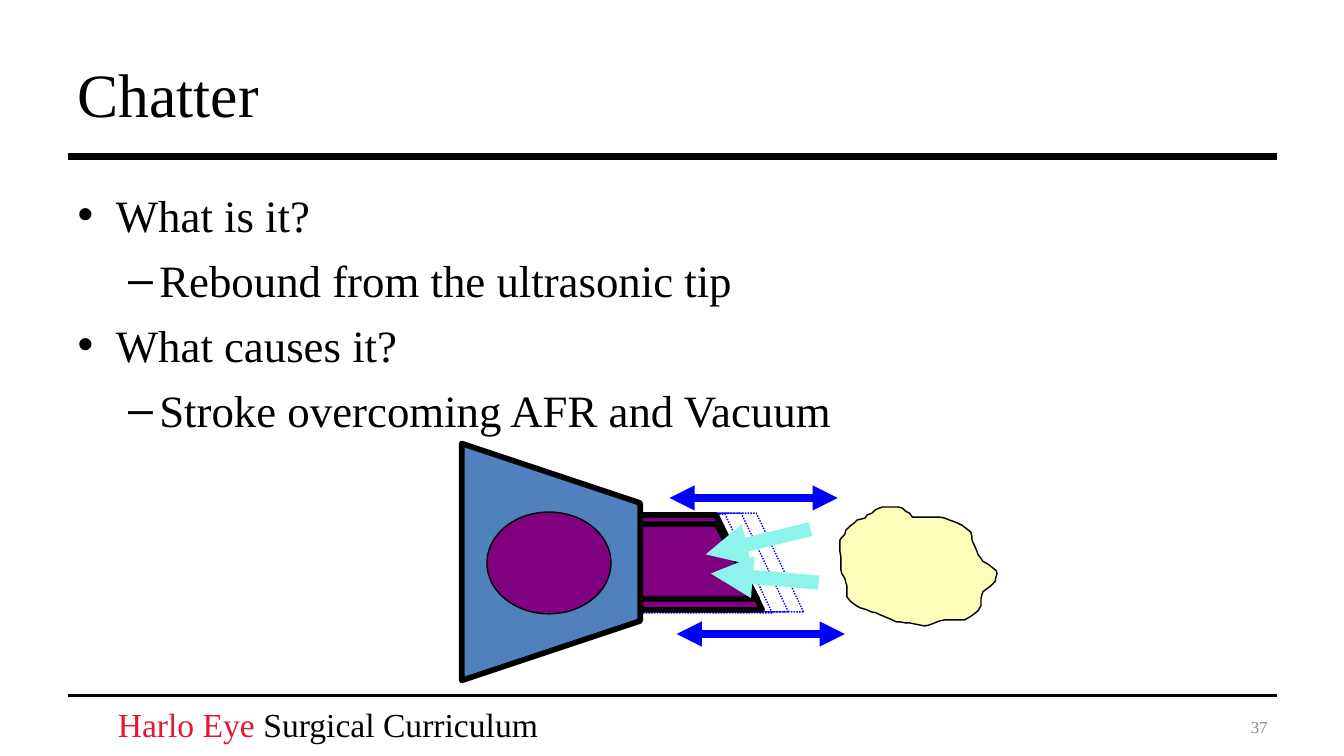
from lxml import etree
from pptx import Presentation
from pptx.dml.color import RGBColor
from pptx.enum.dml import MSO_LINE
from pptx.enum.shapes import MSO_CONNECTOR, MSO_SHAPE
from pptx.enum.text import MSO_ANCHOR, MSO_AUTO_SIZE, PP_ALIGN
from pptx.oxml.ns import qn
from pptx.util import Inches, Pt

STRAIGHT = MSO_CONNECTOR.STRAIGHT
SLANT, OVAL = MSO_SHAPE.PARALLELOGRAM, MSO_SHAPE.OVAL
DOTTED = MSO_LINE.ROUND_DOT
MIDDLE, TOP = MSO_ANCHOR.MIDDLE, MSO_ANCHOR.TOP
LEFT, RIGHT = PP_ALIGN.LEFT, PP_ALIGN.RIGHT
NO_FIT = MSO_AUTO_SIZE.NONE

BLACK = RGBColor(0x00, 0x00, 0x00)
RED = RGBColor(0xE2, 0x18, 0x35)
GRAY = RGBColor(0x8C, 0x8C, 0x8C)
BLUE = RGBColor(0x00, 0x00, 0xFF)
STEEL = RGBColor(0x4F, 0x81, 0xBD)
PURPLE = RGBColor(0x80, 0x00, 0x80)
AQUA = RGBColor(0x8C, 0xF4, 0xEA)
CREAM = RGBColor(0xFC, 0xFE, 0xB9)
FONT = "Times New Roman"

# Level, text
POINTS = [
    (0, "What is it?"),
    (1, "Rebound from the ultrasonic tip"),
    (0, "What causes it?"),
    (1, "Stroke overcoming AFR and Vacuum"),
]
# Bullet, left margin, hanging indent for each level
LEVELS = [("•", 0.38, 0.38), ("–", 0.81, 0.31)]

# Outlines in hundredths of an inch
SLEEVE = [(458, 440), (635, 499), (635, 616), (458, 675)]
CHUNK = [
    (868, 506), (865, 509), (860, 511), (858, 514), (854, 515), (850, 516),
    (847, 519), (843, 522), (839, 526), (838, 530), (835, 533), (833, 536),
    (833, 547), (834, 552), (834, 565), (835, 569), (838, 574), (839, 578),
    (840, 581), (840, 592), (843, 596), (848, 600), (853, 603), (860, 605),
    (864, 607), (869, 608), (873, 610), (878, 612), (885, 615), (889, 617),
    (893, 617), (898, 618), (902, 618), (907, 619), (912, 620), (917, 621),
    (922, 620), (927, 618), (932, 616), (937, 615), (957, 615), (962, 612),
    (965, 610), (970, 606), (973, 601), (973, 594), (974, 590), (975, 587),
    (979, 584), (983, 581), (987, 577), (988, 572), (989, 569), (988, 566),
    (983, 562), (979, 559), (975, 557), (973, 554), (970, 550), (969, 547),
    (967, 542), (965, 538), (964, 535), (964, 532), (963, 528), (958, 524),
    (954, 521), (950, 519), (945, 517), (942, 516), (937, 514), (932, 513),
    (905, 513), (902, 509), (898, 507), (895, 504), (891, 503), (875, 503),
    (870, 505),
]


def place(shape, left, top, width, height):
    shape.left, shape.top = Inches(left), Inches(top)
    shape.width, shape.height = Inches(width), Inches(height)


def style(font, size, color):
    font.name, font.size = FONT, Pt(size)
    font.color.rgb = color


def paint(shape, fill, line, width):
    shape.shadow.inherit = False
    if fill is None:
        shape.fill.background()
    else:
        shape.fill.solid()
        shape.fill.fore_color.rgb = fill
    shape.line.color.rgb = line
    shape.line.width = Pt(width)


def add_line(slide, start, end, color, width, ends=()):
    line = slide.shapes.add_connector(
        STRAIGHT, *(Inches(value) for value in start + end))
    line.line.color.rgb = color
    line.line.width = Pt(width)
    props = line.line._get_or_add_ln()
    for tag in ends:
        etree.SubElement(props, qn(tag), type="triangle")
    etree.SubElement(line._element.spPr, qn("a:effectLst"))


def add_shape(slide, kind, box, fill, line, width):
    shape = slide.shapes.add_shape(kind, *(Inches(value) for value in box))
    paint(shape, fill, line, width)
    return shape


def add_slant(slide, box, ratio, fill, line, width):
    shape = add_shape(slide, SLANT, box, fill, line, width)
    shape.adjustments[0] = ratio
    shape._element.spPr.xfrm.set("flipH", "1")
    return shape


def add_form(slide, points, fill, width):
    form = slide.shapes.build_freeform(*points[0], scale=Inches(0.01))
    form.add_line_segments(points[1:], close=True)
    paint(form.convert_to_shape(), fill, BLACK, width)


def add_text(slide, box, runs, size, align=LEFT, anchor=TOP):
    frame = slide.shapes.add_textbox(
        *(Inches(value) for value in box)).text_frame
    frame.word_wrap = True
    frame.vertical_anchor = anchor
    para = frame.paragraphs[0]
    para.alignment = align
    for text, color in runs:
        run = para.add_run()
        run.text = text
        style(run.font, size, color)


def fill_title(title):
    place(title, 0.67, 0.3, 12, 1.25)
    title.text = "Chatter"
    frame = title.text_frame
    frame.auto_size = NO_FIT
    frame.vertical_anchor = MIDDLE
    para = frame.paragraphs[0]
    para.alignment = LEFT
    style(para.font, 44, BLACK)


def fill_body(body):
    place(body, 0.67, 1.75, 12, 5.02)
    frame = body.text_frame
    frame.auto_size = NO_FIT
    frame.margin_top = Inches(0.11)
    for index, (level, text) in enumerate(POINTS):
        para = frame.add_paragraph() if index else frame.paragraphs[0]
        para.text, para.level = text, level
        para.space_before = Pt(8 if index else 0)
        mark, margin, hang = LEVELS[level]
        props = para._p.get_or_add_pPr()
        props.set("marL", str(Inches(margin)))
        props.set("indent", str(-Inches(hang)))
        etree.SubElement(props, qn("a:buChar"), char=mark)
        style(para.font, 32, BLACK)


def draw_tip(slide):
    # Moving positions of the needle
    for left, top in [(5.61, 5.1), (5.77, 5.09), (5.92, 5.09)]:
        ghost = add_slant(slide, (left, top, 2.05, 0.98), 0.479, None, BLUE, 1)
        ghost.line.dash_style = DOTTED

    # Needle and handpiece
    add_slant(slide, (5.55, 5.11, 2.01, 0.94), 0.487, PURPLE, BLACK, 4)
    add_slant(slide, (5.74, 5.2, 1.77, 0.74), 0.545, PURPLE, BLACK, 4)
    add_form(slide, SLEEVE, STEEL, 4)
    add_shape(slide, OVAL, (4.83, 5.08, 1.23, 1.01), PURPLE, BLACK, 1)

    # Stroke and flow arrows
    both = ("a:headEnd", "a:tailEnd")
    for left, top in [(6.64, 4.94), (6.71, 6.29)]:
        add_line(slide, (left, top), (left + 1.67, top), BLUE, 6, both)
    for start, end in [((7, 5.5), (8.04, 5.25)), ((7.05, 5.69), (8.12, 5.78))]:
        add_line(slide, start, end, AQUA, 10, both[:1])

    # Lens fragment
    add_form(slide, CHUNK, CREAM, 1)


def main():
    deck = Presentation()
    deck.slide_width, deck.slide_height = Inches(13.33), Inches(7.5)
    slide = deck.slides.add_slide(deck.slide_layouts[1])

    # Rules and footer
    for top, width in [(1.55, 5), (6.9, 2)]:
        add_line(slide, (0.67, top), (12.67, top), BLACK, width)
    add_text(slide, (1.07, 6.93, 4.4, 0.5),
             [("Harlo Eye", RED), (" Surgical Curriculum", BLACK)], 24)
    add_text(slide, (9.56, 7.01, 3.11, 0.4), [("37", GRAY)], 12, RIGHT, MIDDLE)

    # Text and drawing
    fill_title(slide.shapes.title)
    fill_body(slide.placeholders[1])
    draw_tip(slide)
    deck.save("out.pptx")


if __name__ == "__main__":
    main()
